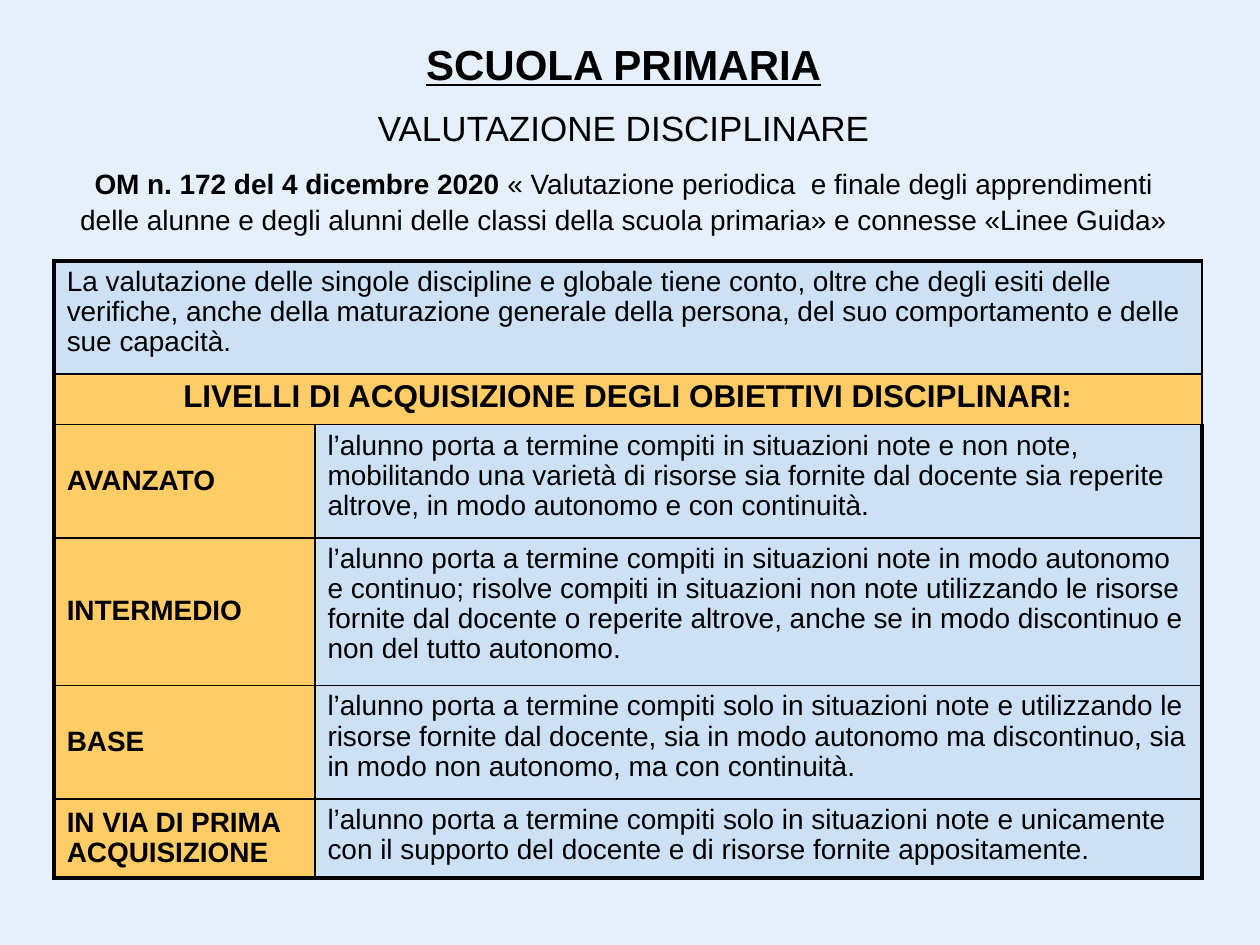
import pptx
import pptx.util
import pptx.dml.color
import pptx.enum.text
import pptx.oxml.ns
from lxml import etree

Inches, Pt = pptx.util.Inches, pptx.util.Pt
RGBColor = pptx.dml.color.RGBColor
ALIGN = pptx.enum.text.PP_ALIGN
ANCHOR = pptx.enum.text.MSO_ANCHOR

BACKGROUND = RGBColor(0xE5, 0xF0, 0xFA)
BLUE = RGBColor(0xCC, 0xE1, 0xF5)
ORANGE = RGBColor(0xFF, 0xCC, 0x66)
BLACK = RGBColor(0, 0, 0)

OUTER, INNER = Pt(2.25), Pt(1)

# Each heading line: paragraph of (text, font format) spans
HEADING = [
    [("SCUOLA PRIMARIA", dict(size=Pt(24), bold=True, underline=True))],
    [("VALUTAZIONE DISCIPLINARE", dict(size=Pt(20)))],
    [("OM n. 172 del 4 dicembre 2020 ", dict(size=Pt(16), bold=True)),
     ("« Valutazione periodica  e finale degli apprendimenti delle alunne e "
      "degli alunni delle classi della scuola primaria» e connesse "
      "«Linee Guida»", dict(size=Pt(16)))],
]

INTRO = ("La valutazione delle singole discipline e globale tiene conto, oltre "
         "che degli esiti delle verifiche, anche della maturazione generale "
         "della persona, del suo comportamento e delle sue capacità.")
LEVELS_TITLE = "LIVELLI DI ACQUISIZIONE DEGLI OBIETTIVI DISCIPLINARI:"
LEVELS = [
    ("AVANZATO",
     "l’alunno porta a termine compiti in situazioni note e non note, "
     "mobilitando una varietà di risorse sia fornite dal docente sia reperite "
     "altrove, in modo autonomo e con continuità."),
    ("INTERMEDIO",
     "l’alunno porta a termine compiti in situazioni note in modo autonomo e "
     "continuo; risolve compiti in situazioni non note utilizzando le risorse "
     "fornite dal docente o reperite altrove, anche se in modo discontinuo e "
     "non del tutto autonomo."),
    ("BASE",
     "l’alunno porta a termine compiti solo in situazioni note e utilizzando le "
     "risorse fornite dal docente, sia in modo autonomo ma discontinuo, sia in "
     "modo non autonomo, ma con continuità."),
    ("IN VIA DI PRIMA ACQUISIZIONE",
     "l’alunno porta a termine compiti solo in situazioni note e unicamente con "
     "il supporto del docente e di risorse fornite appositamente."),
]
COLUMN_WIDTHS = [2.07, 7.04]
ROW_HEIGHTS = [0.9, 0.4, 0.9, 1.17, 0.9, 0.63]


def set_all(target, values):
    for name, value in values.items():
        setattr(target, name, value)


def add_span(para, text, values):
    span = para.add_run()
    span.text = text
    set_all(span.font, dict(name="Arial", bold=False, underline=False) | values)
    span.font.color.rgb = BLACK


def set_borders(cell, widths):
    """Draw left, right, top and bottom lines, in that order."""
    properties = cell._tc.get_or_add_tcPr()
    qn = pptx.oxml.ns.qn
    for side, width in zip("LRTB", widths):
        line = etree.SubElement(properties, qn("a:ln" + side), w=str(int(width)))
        fill = etree.SubElement(line, qn("a:solidFill"))
        etree.SubElement(fill, qn("a:srgbClr"), val=str(BLACK))


def fill_cell(cell, text, color, size=16, bold=False,
              align=ALIGN.LEFT, anchor=ANCHOR.TOP):
    cell.fill.solid()
    cell.fill.fore_color.rgb = color
    cell.vertical_anchor = anchor
    para = cell.text_frame.paragraphs[0]
    set_all(para, dict(alignment=align, line_spacing=0.97))
    add_span(para, text, dict(size=Pt(size), bold=bold))


def place_heading(page, box):
    title = page.shapes.title
    set_all(title, dict(zip(("left", "top", "width", "height"), box)))
    frame = title.text_frame
    set_all(frame, dict(word_wrap=True, vertical_anchor=ANCHOR.MIDDLE,
                        auto_size=pptx.enum.text.MSO_AUTO_SIZE.NONE))
    for index, spans in enumerate(HEADING):
        para = frame.add_paragraph() if index else frame.paragraphs[0]
        set_all(para, dict(alignment=ALIGN.CENTER, line_spacing=1.06,
                           space_before=Pt(9 if index else 0)))
        for text, values in spans:
            add_span(para, text, values)


def place_levels_table(page, box):
    rows, columns = len(ROW_HEIGHTS), len(COLUMN_WIDTHS)
    table = page.shapes.add_table(rows, columns, *box).table
    set_all(table, dict(first_row=False, horz_banding=False))
    for column, width in zip(table.columns, COLUMN_WIDTHS):
        column.width = Inches(width)
    for row, height in zip(table.rows, ROW_HEIGHTS):
        row.height = Inches(height)

    # Thick frame, thin inner lines
    for r in range(rows):
        for c in range(columns):
            edges = (c == 0, c == columns - 1, r == 0, r == rows - 1)
            set_borders(table.cell(r, c),
                        [OUTER if edge else INNER for edge in edges])

    # Full-width rows
    for r in range(2):
        table.cell(r, 0).merge(table.cell(r, 1))
    fill_cell(table.cell(0, 0), INTRO, BLUE)
    fill_cell(table.cell(1, 0), LEVELS_TITLE, ORANGE, size=18, bold=True,
              align=ALIGN.CENTER)

    # Level rows
    for r, (level, description) in enumerate(LEVELS, start=2):
        fill_cell(table.cell(r, 0), level, ORANGE, bold=True,
                  anchor=ANCHOR.MIDDLE)
        fill_cell(table.cell(r, 1), description, BLUE)


def main():
    deck = pptx.Presentation()
    set_all(deck, dict(slide_width=Inches(10), slide_height=Inches(7.5)))
    page = deck.slides.add_slide(deck.slide_layouts[5])
    page.background.fill.solid()
    page.background.fill.fore_color.rgb = BACKGROUND

    place_heading(page, [Inches(v) for v in (0.41, 0.21, 9.08, 1.73)])
    place_levels_table(page, [Inches(v) for v in (0.43, 2.07, 9.11, 4.9)])
    deck.save("out.pptx")


if __name__ == "__main__":
    main()
